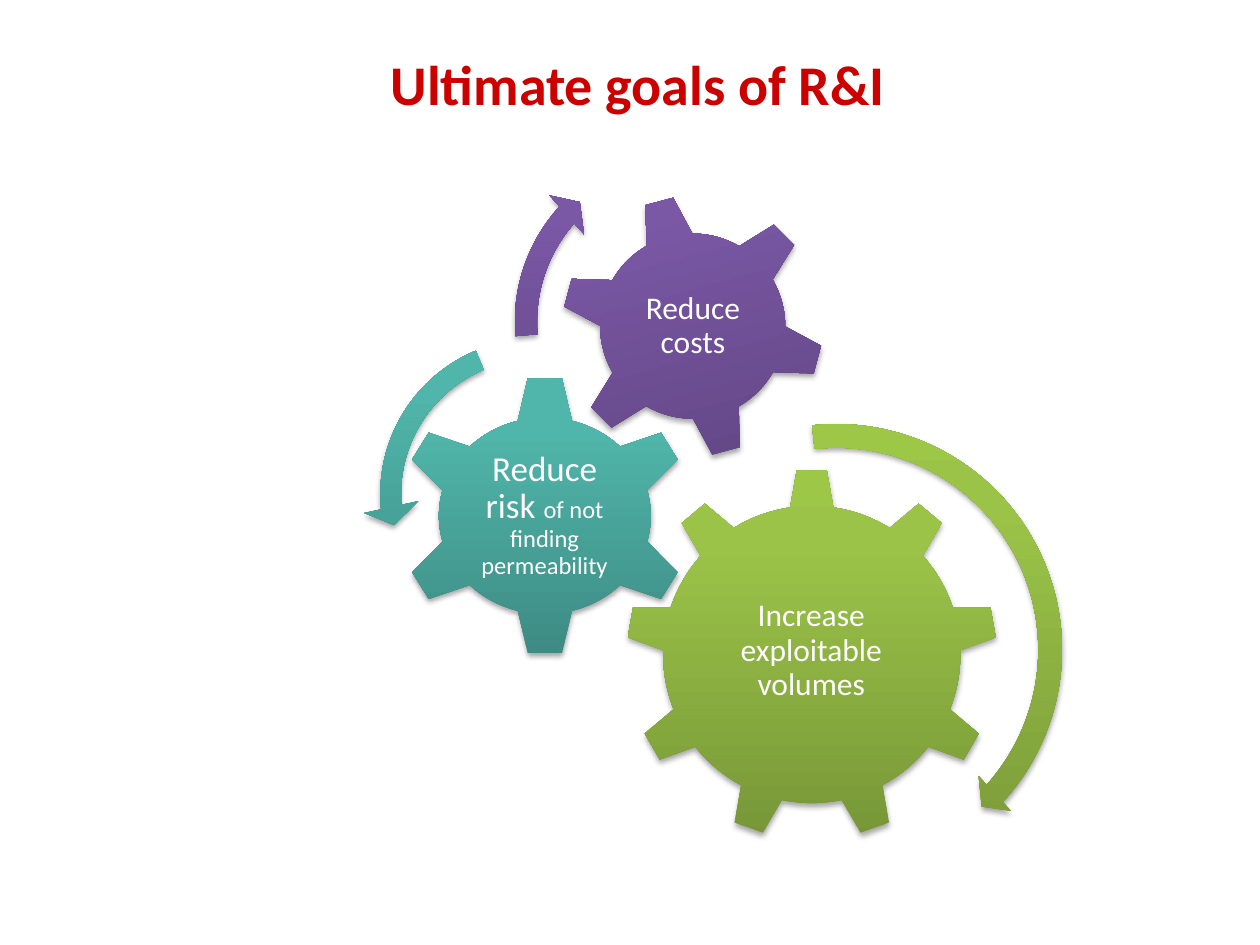
from copy import deepcopy

from pptx import Presentation
from pptx.dml.color import RGBColor
from pptx.enum.shapes import MSO_SHAPE as SHAPE
from pptx.enum.text import MSO_ANCHOR as ANCHOR, PP_ALIGN as ALIGN
from pptx.oxml import parse_xml
from pptx.oxml.ns import nsdecls, qn
from pptx.util import Cm, Pt

FONT = "Calibri"
COLORS = {"title": "CD0000", "text": "FFFFFF", "shadow": "000000"}
# Gradient colours from bottom to top
GRADIENTS = {
    "green": ("779737", "9BC348", "9DC746"),
    "teal": ("3D8B83", "50B5AA", "4EB8AC"),
    "purple": ("5F4480", "7B58A6", "7C57A8"),
}
STOPS = (0, 0.8, 1)

# Shape, colour, rotation, gear box, text box, runs of (text, size)
GEARS = [
    (SHAPE.GEAR_9, "green", 0, (12.62, 9.45, 7.49, 7.49),
     (14.12, 11.2, 4.47, 3.84), [("Increase exploitable volumes", 18)]),
    (SHAPE.GEAR_6, "teal", 0, (8, 7.57, 5.97, 5.66),
     (9.47, 8.99, 3.02, 2.79),
     [("Reduce risk ", 20), ("of not finding permeability", 14)]),
    (SHAPE.GEAR_6, "purple", 345, (11.3, 3.91, 5.33, 5.33),
     (12.47, 5.08, 3, 3), [("Reduce costs", 18)]),
]

# Shape, colour, left, top, size, adjustments
ARROWS = [
    (SHAPE.CIRCULAR_ARROW, "green", 12.07, 8.31, 9.58,
     (0.05, 2.99, 25.31, 158.3, 0.05)),
    (SHAPE.LEFT_CIRCULAR_ARROW, "teal", 7.32, 6.48, 6.96,
     (0.06, 4.3, 104.89, 148.38, 0.08)),
    (SHAPE.CIRCULAR_ARROW, "purple", 10.08, 2.74, 7.49,
     (0.06, 3.94, 133.14, 105.08, 0.07)),
]


def set_margins(tf, left, top, right, bottom):
    tf.margin_left, tf.margin_top = Cm(left), Cm(top)
    tf.margin_right, tf.margin_bottom = Cm(right), Cm(bottom)


def add_run(p, text, size, color, bold=False):
    r = p.add_run()
    r.text = text
    r.font.name = FONT
    r.font.size = Pt(size)
    r.font.bold = bold
    r.font.color.rgb = RGBColor.from_string(COLORS[color])


def add_shadow(sp):
    sp.shadow.inherit = False
    effects = sp._element.spPr.find(qn("a:effectLst"))
    effects.append(parse_xml(
        f'<a:outerShdw {nsdecls("a")} blurRad="{Pt(3.1)}" dist="{Pt(1.8)}" '
        f'dir="5400000" rotWithShape="0"><a:srgbClr val="{COLORS["shadow"]}">'
        '<a:alpha val="35000"/></a:srgbClr></a:outerShdw>'))


def add_part(slide, kind, color, box):
    """Add a borderless shape with a vertical gradient and a soft shadow."""
    sp = slide.shapes.add_shape(kind, *map(Cm, box))
    sp.fill.gradient()
    sp.fill.gradient_angle = 90
    stop_list = sp._element.spPr.find(".//" + qn("a:gsLst"))
    stop_list.append(deepcopy(stop_list[-1]))
    for stop, position, value in zip(sp.fill.gradient_stops, STOPS,
                                     GRADIENTS[color]):
        stop.position = position
        stop.color.rgb = RGBColor.from_string(value)
    sp.line.fill.background()
    add_shadow(sp)
    return sp


def add_gear(slide, kind, color, rotation, box, text_box, runs):
    add_part(slide, kind, color, box).rotation = rotation
    tf = slide.shapes.add_textbox(*map(Cm, text_box)).text_frame
    tf.word_wrap = True
    tf.vertical_anchor = ANCHOR.MIDDLE
    set_margins(tf, 0.08, 0.08, 0.08, 0.08)
    p = tf.paragraphs[0]
    p.alignment = ALIGN.CENTER
    p.line_spacing = 0.9
    for text, size in runs:
        add_run(p, text, size, "text")


def add_arrow(slide, kind, color, left, top, size, adjustments):
    sp = add_part(slide, kind, color, (left, top, size, size))
    for i, value in enumerate(adjustments):
        sp.adjustments[i] = value


def set_title(slide, text):
    title = slide.shapes.title
    title.left, title.top = Cm(2.11), Cm(0.91)
    title.width, title.height = Cm(21.62), Cm(1.6)
    tf = title.text_frame
    tf.vertical_anchor = ANCHOR.BOTTOM
    set_margins(tf, 0.15, 0.15, 0.4, 0.15)
    p = tf.paragraphs[0]
    p.alignment = ALIGN.CENTER
    p._p.get_or_add_pPr().set("marL", str(Cm(0.13)))
    add_run(p, text, 32, "title", bold=True)


def main():
    prs = Presentation()
    prs.slide_width, prs.slide_height = Cm(25.4), Cm(19.05)
    slide = prs.slides.add_slide(prs.slide_layouts[5])
    set_title(slide, "Ultimate goals of R&I")
    for gear in GEARS:
        add_gear(slide, *gear)
    for arrow in ARROWS:
        add_arrow(slide, *arrow)
    prs.save("out.pptx")


if __name__ == "__main__":
    main()
